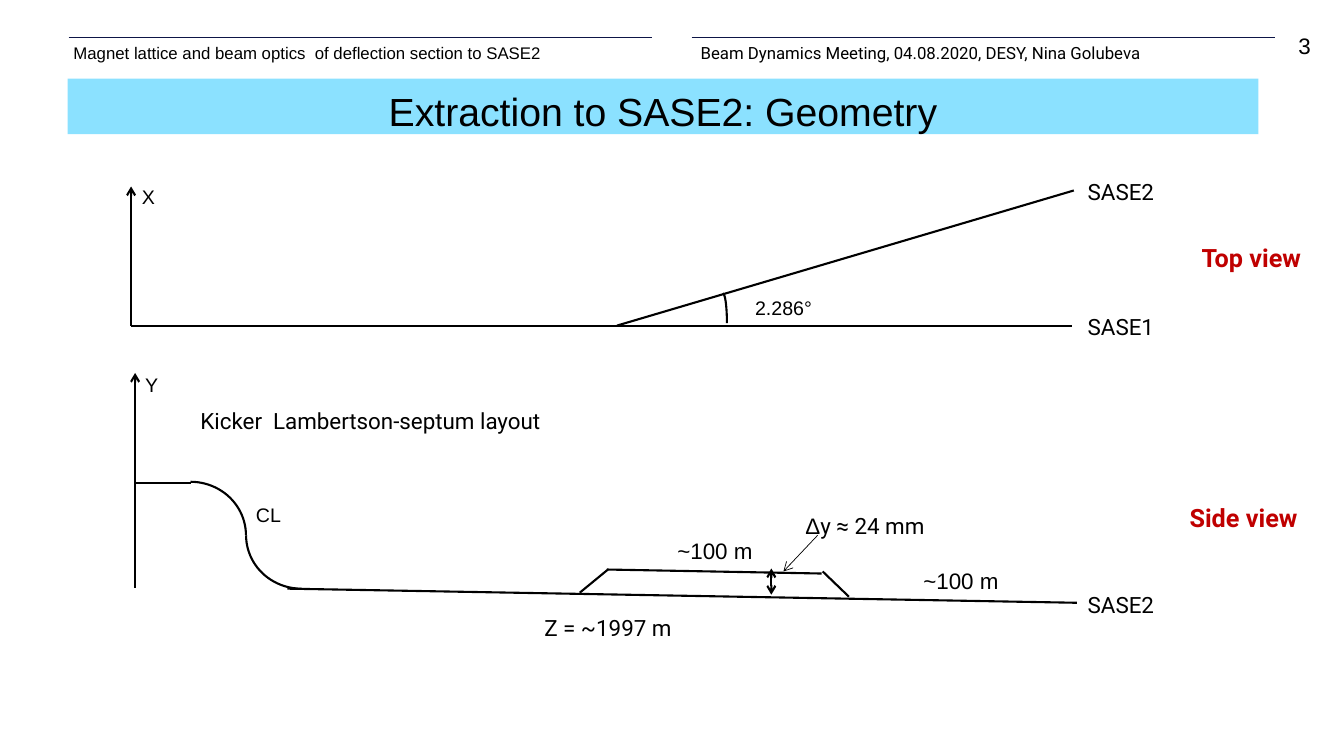
"""Build the slide on the extraction geometry towards SASE2."""
from lxml.etree import SubElement
from pptx import Presentation
from pptx.dml.color import RGBColor
from pptx.enum.shapes import MSO_CONNECTOR, MSO_SHAPE
from pptx.enum.text import MSO_ANCHOR, PP_ALIGN
from pptx.oxml.ns import qn
from pptx.util import Pt

PX = 9144
BLACK, NAVY, RED, SKY = "000000", "0D1546", "C00000", "8BE1FF"
ARIAL, ROBOTO = "Arial", "Roboto"

TITLE = ("Extraction to SASE2: Geometry", (67, 78, 1181, 55))
PAGE_NUMBER = ("3", (1244, 32, 56, 32))

HEADER = {
    "lines": [((68, 37), (647, 37), 0.5, NAVY, ""),
              ((686, 37), (1265, 37), 0.5, NAVY, "")],
    "arcs": [],
    "labels": [
        ([("Magnet lattice and beam optics  of deflection section to SASE2", ARIAL)],
         (63, 35, 512, 28), 12, BLACK),
        ([("Beam Dynamics Meeting, 04.08.2020, DESY, Nina Golubeva", ROBOTO)],
         (685, 35, 472, 28), 12, BLACK),
    ],
}
TOP_VIEW = {
    "lines": [((130, 323), (1063, 323), 1.5, BLACK, ""),
              ((612, 323), (1065, 189), 1.5, BLACK, ""),
              ((130, 323), (130, 185), 1.5, BLACK, "tail")],
    "arcs": [((713, 291, 8, 59), 0)],
    "labels": [
        ([("2.286°", ARIAL)], (739, 286, 100, 33), 14, BLACK),
        ([("SASE1", ROBOTO)], (1069, 303, 100, 37), 16, BLACK),
        ([("SASE2", ROBOTO)], (1069, 169, 100, 37), 16, BLACK),
        ([("X", ARIAL)], (131, 176, 40, 32), 14, BLACK),
        ([("Top view", ROBOTO)], (1182, 232, 138, 44), 18, RED),
    ],
}
SIDE_VIEW = {
    "lines": [((134, 479), (189, 479), 1.5, BLACK, ""),
              ((134, 583), (134, 370), 1.5, BLACK, "tail"),
              ((285, 584), (1068, 598), 1.5, BLACK, ""),
              ((575, 588), (603, 565), 1.5, BLACK, ""),
              ((602, 565), (815, 569), 1.5, BLACK, ""),
              ((816, 567), (842, 592), 1.5, BLACK, ""),
              ((765, 564), (765, 590), 1.5, BLACK, "head tail"),
              ((811, 531), (777, 567), 0.5, BLACK, "tail")],
    "arcs": [((134, 478, 110, 106), 0), ((244, 478, 110, 106), 180)],
    "labels": [
        ([("Y", ARIAL)], (134, 362, 40, 33), 14, BLACK),
        ([("CL", ARIAL)], (244, 491, 60, 35), 14, BLACK),
        ([("SASE2", ROBOTO)], (1069, 578, 100, 37), 16, BLACK),
        ([("Side view", ROBOTO)], (1170, 490, 138, 44), 18, RED),
        ([("Z = ~1997 m", ROBOTO)], (530, 601, 160, 28), 16, BLACK),
        ([("~100 m", ARIAL)], (662, 525, 110, 28), 16, BLACK),
        ([("~100 m", ARIAL)], (906, 555, 110, 28), 16, BLACK),
        ([("Δ", ARIAL), ("y ≈ 24 mm", ROBOTO)], (789, 500, 150, 30), 16, BLACK),
        ([("Kicker  Lambertson-septum layout", ROBOTO)], (189, 396, 380, 48), 16, BLACK),
    ],
}


def rgb(color):
    return RGBColor.from_string(color)


def scaled(lengths):
    return [length * PX for length in lengths]


def style_font(font, name, size, color, bold=False):
    font.name, font.size, font.bold = name, Pt(size), bold
    font.color.rgb = rgb(color)


def clear_margins(frame):
    frame.margin_left = frame.margin_right = frame.margin_top = frame.margin_bottom = 0


def add_line(shapes, start, end, width, color, arrows):
    line = shapes.add_connector(MSO_CONNECTOR.STRAIGHT, *scaled(start + end))
    line.line.width = Pt(width)
    line.line.color.rgb = rgb(color)
    properties = line.element.spPr
    for side in arrows.split():
        SubElement(properties.find(qn("a:ln")), qn(f"a:{side}End"), type="arrow")
    SubElement(properties, qn("a:effectLst"))


def add_arc(shapes, place, rotation):
    arc = shapes.add_shape(MSO_SHAPE.ARC, *scaled(place))
    arc.shadow.inherit = False
    arc.fill.background()
    arc.line.color.rgb = rgb(BLACK)
    arc.line.width = Pt(1.5)
    arc.rotation = rotation


def add_label(shapes, spans, place, size, color):
    frame = shapes.add_textbox(*scaled(place)).text_frame
    frame.word_wrap = False
    para = frame.paragraphs[0]
    para.line_spacing = 1.12
    for text, font_name in spans:
        span = para.add_run()
        span.text = text
        style_font(span.font, font_name, size, color, color == RED)


def add_part(shapes, part):
    for line in part["lines"]:
        add_line(shapes, *line)
    for arc in part["arcs"]:
        add_arc(shapes, *arc)
    for label in part["labels"]:
        add_label(shapes, *label)


def add_title(page):
    text, place = TITLE
    title = page.shapes.title
    title.left, title.top, title.width, title.height = scaled(place)
    title.fill.solid()
    title.fill.fore_color.rgb = rgb(SKY)
    frame = title.text_frame
    frame.text = text
    clear_margins(frame)
    frame.vertical_anchor = MSO_ANCHOR.BOTTOM
    para = frame.paragraphs[0]
    para.alignment = PP_ALIGN.CENTER
    style_font(para.runs[0].font, ARIAL, 28, BLACK)


def add_page_number(page):
    text, place = PAGE_NUMBER
    frame = page.shapes.add_textbox(*scaled(place)).text_frame
    frame.text = text
    frame.word_wrap = True
    clear_margins(frame)
    para = frame.paragraphs[0]
    para.alignment = PP_ALIGN.RIGHT
    style_font(para.runs[0].font, ARIAL, 16, BLACK)


def main():
    deck = Presentation()
    deck.slide_width, deck.slide_height = scaled((1333, 750))
    page = deck.slides.add_slide(deck.slide_layouts[5])
    add_title(page)
    add_page_number(page)
    add_part(page.shapes, HEADER)
    for view in (TOP_VIEW, SIDE_VIEW):
        add_part(page.shapes.add_group_shape().shapes, view)
    deck.save("out.pptx")


if __name__ == "__main__":
    main()
